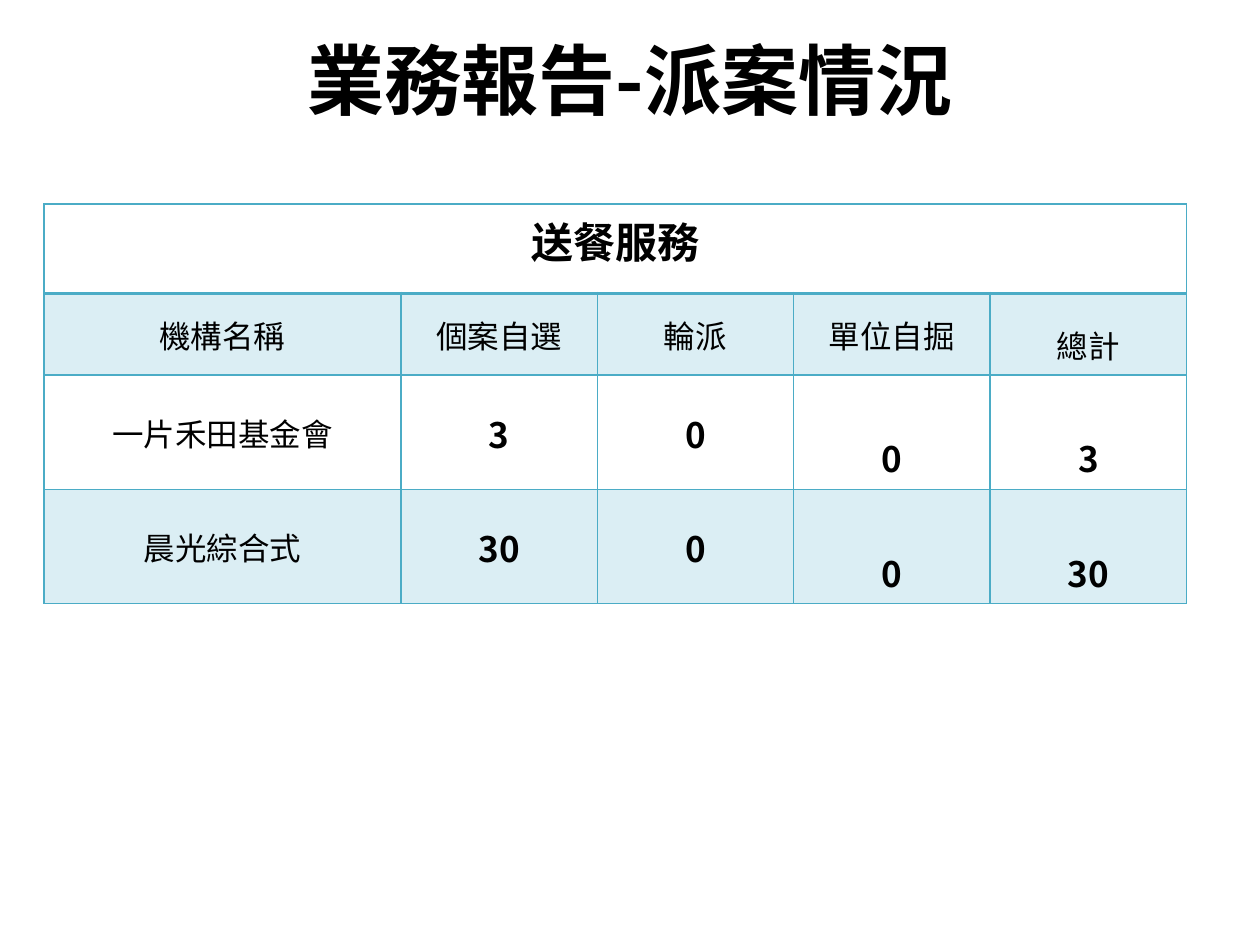
"""Build a slide reporting how meal delivery cases were assigned."""
import lxml.etree
import pptx
import pptx.dml.color
import pptx.enum.text
import pptx.oxml.ns
import pptx.util

Cm = pptx.util.Cm
Pt = pptx.util.Pt
MIDDLE = pptx.enum.text.MSO_ANCHOR.MIDDLE
TOP = pptx.enum.text.MSO_ANCHOR.TOP
FONT = "Noto Sans CJK SC"
BLACK = pptx.dml.color.RGBColor(0x00, 0x00, 0x00)
TEAL = pptx.dml.color.RGBColor(0x4B, 0xAC, 0xC6)
PALE_TEAL = pptx.dml.color.RGBColor(0xDB, 0xEE, 0xF4)


def format_text(para, size, bold):
    para.alignment = pptx.enum.text.PP_ALIGN.CENTER
    font = para.font
    font.size, font.bold, font.name = Pt(size), bold, FONT
    font.color.rgb = BLACK
    latin = para._p.find(".//" + pptx.oxml.ns.qn("a:latin"))
    east_asian = lxml.etree.Element(pptx.oxml.ns.qn("a:ea"), typeface=FONT)
    latin.addnext(east_asian)


def add_border(cell, side, width):
    properties = cell._tc.get_or_add_tcPr()
    line = lxml.etree.SubElement(
        properties, pptx.oxml.ns.qn("a:ln" + side), w=str(Pt(width)))
    fill = lxml.etree.SubElement(line, pptx.oxml.ns.qn("a:solidFill"))
    lxml.etree.SubElement(fill, pptx.oxml.ns.qn("a:srgbClr"), val=str(TEAL))


deck = pptx.Presentation()
deck.slide_width, deck.slide_height = Cm(25.4), Cm(19.05)
slide = deck.slides.add_slide(deck.slide_layouts[5])

title = slide.shapes.title
title.left, title.top, title.width, title.height = Cm(1.27), Cm(0), Cm(22.86), Cm(3.18)
title.text_frame.text = "業務報告-派案情況"
title.text_frame.vertical_anchor = MIDDLE
format_text(title.text_frame.paragraphs[0], 44, True)

rows = [
    ["送餐服務", "", "", "", ""],
    ["機構名稱", "個案自選", "輪派", "單位自掘", "總計"],
    ["一片禾田基金會", "3", "0", "0", "3"],
    ["晨光綜合式", "30", "0", "0", "30"],
]
column_widths = [7.19, 3.96, 3.96, 3.96, 3.96]
row_heights = [1.8, 1.65, 2.3, 2.3]
table = slide.shapes.add_table(
    len(rows), len(column_widths), Cm(0.89), Cm(4.11),
    Cm(sum(column_widths)), Cm(sum(row_heights))).table
for column, width in zip(table.columns, column_widths):
    column.width = Cm(width)
for row, height in zip(table.rows, row_heights):
    row.height = Cm(height)
table.cell(0, 0).merge(table.cell(0, 4))

for row_index, row in enumerate(rows):
    for column_index, text in enumerate(row):
        cell = table.cell(row_index, column_index)
        for side in "LRTB":
            heavy = (row_index, side) in [(0, "B"), (1, "T")]
            add_border(cell, side, 2 if heavy else 1)
        if row_index % 2:
            cell.fill.solid()
            cell.fill.fore_color.rgb = PALE_TEAL
        else:
            cell.fill.background()
        if not text:
            continue
        cell.text = text
        para = cell.text_frame.paragraphs[0]
        if row_index == 0:
            format_text(para, 24, True)
            continue
        is_number = row_index > 1 and column_index > 0
        spaced = column_index == 4 or (is_number and column_index == 3)
        if spaced:
            cell.vertical_anchor = TOP
            para.line_spacing = 2.0 if is_number else 1.5
        else:
            cell.vertical_anchor = MIDDLE
            cell.margin_left = cell.margin_right = cell.margin_top = Cm(0.03)
            cell.margin_bottom = Cm(0)
        format_text(para, 20 if is_number else 18, is_number)

deck.save("out.pptx")
